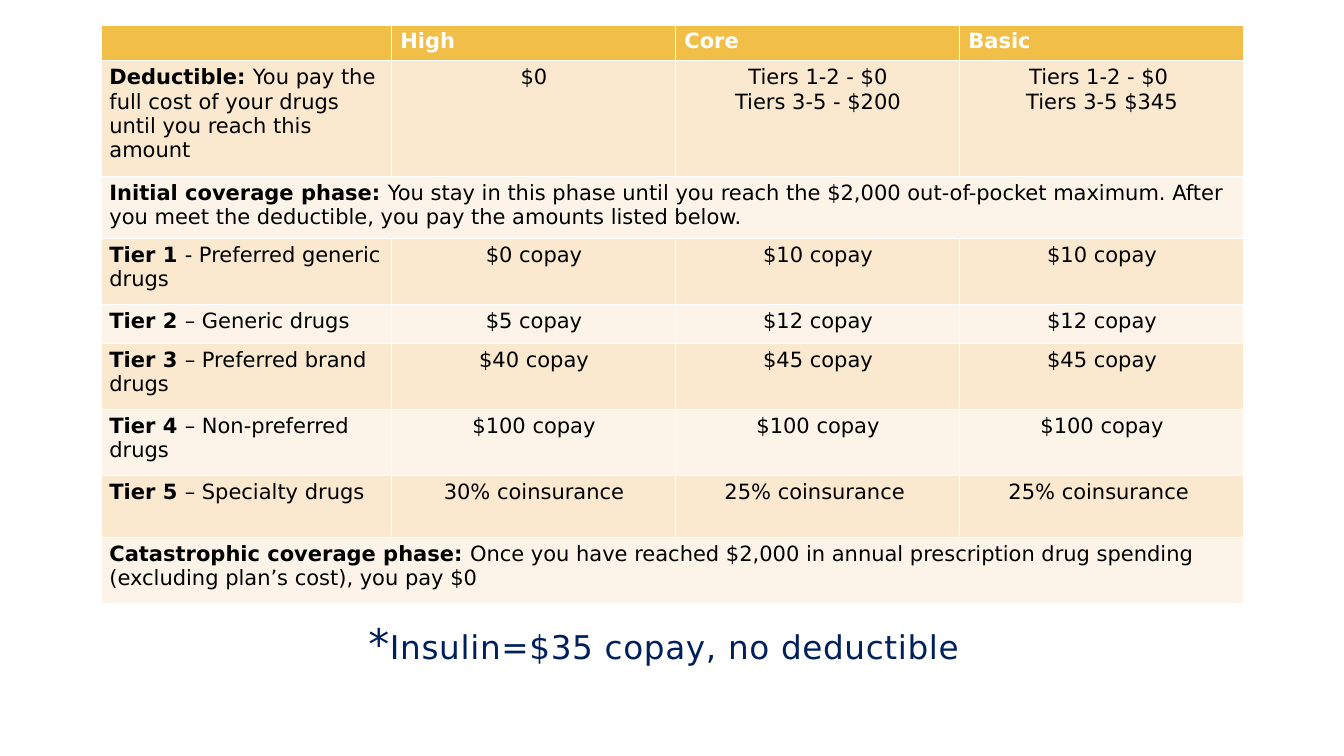
from pptx import Presentation
from pptx.dml.color import RGBColor
from pptx.enum.text import MSO_ANCHOR, PP_ALIGN
from pptx.util import Pt

PX = 914400 // 84
GOLD, SAND, CREAM = "F1BE48", "FAE8CF", "FCF4E9"
WHITE, BLACK, NAVY = "FFFFFF", "000000", "00205B"

# Each row: height, cells. A cell is a list of lines; a label is (bold, plain).
HEAD = ["", "High", "Core", "Basic"]
ROWS = [
    (116, ("Deductible: ", "You pay the full cost of your drugs until you reach this amount"),
     ["$0"], ["Tiers 1-2 - $0", "Tiers 3-5 - $200"], ["Tiers 1-2 - $0 ", "Tiers 3-5 $345"]),
    (62, ("Initial coverage phase: ",
          "You stay in this phase until you reach the $2,000 out-of-pocket maximum. "
          "After you meet the deductible, you pay the amounts listed below.")),
    (66, ("Tier 1 ", "- Preferred generic drugs"),
     ["$0 copay"], ["$10 copay"], ["$10 copay"]),
    (39, ("Tier 2 ", "– Generic drugs"),
     ["$5 copay"], ["$12 copay"], ["$12 copay"]),
    (66, ("Tier 3 ", "– Preferred brand drugs"),
     ["$40 copay"], ["$45 copay"], ["$45 copay"]),
    (66, ("Tier 4 ", "– Non-preferred drugs"),
     ["$100 copay"], ["$100 copay"], ["$100 copay"]),
    (62, ("Tier 5 ", "– Specialty drugs"),
     ["30% coinsurance"], ["25% coinsurance "], ["25% coinsurance "]),
    (66, ("Catastrophic coverage phase: ",
          "Once you have reached $2,000 in annual prescription drug spending "
          "(excluding plan’s cost), you pay $0")),
]


def color(code):
    return RGBColor.from_string(code)


class Deck:
    def __init__(self, wide, high):
        self.font = "DejaVu Sans"
        self.prs = Presentation()
        self.prs.slide_width, self.prs.slide_height = wide * PX, high * PX
        self.slide = self.prs.slides.add_slide(self.prs.slide_layouts[6])

    def style(self, para, tone, size=18, bold=None):
        font = para.font
        font.name, font.size, font.bold = self.font, Pt(size), bold
        font.color.rgb = color(tone)

    def fill(self, cell, tone):
        cell.fill.solid()
        cell.fill.fore_color.rgb = color(tone)

    def label(self, cell, lead, rest):
        """Write a bold lead followed by plain text."""
        para = cell.text_frame.paragraphs[0]
        for text, bold in ((lead, True), (rest, False)):
            run = para.add_run()
            run.text, run.font.bold = text, bold
        self.style(para, BLACK)

    def lines(self, cell, texts):
        cell.text = "\n".join(texts)
        for para in cell.text_frame.paragraphs:
            para.alignment = PP_ALIGN.CENTER
            self.style(para, BLACK, bold=False)

    def table(self, left, top, cols, head, rows):
        """Fill a table; a row with only a label spans all columns."""
        highs = [36] + [row[0] for row in rows]
        frame = self.slide.shapes.add_table(
            len(highs), len(cols), left * PX, top * PX, sum(cols) * PX, sum(highs) * PX)
        grid = frame.table
        grid.horz_banding = False
        for col, wide in zip(grid.columns, cols):
            col.width = wide * PX
        for row, high in zip(grid.rows, highs):
            row.height = high * PX
        for cell, text in zip(grid.rows[0].cells, head):
            cell.text = text
            self.style(cell.text_frame.paragraphs[0], WHITE, bold=True)
            self.fill(cell, GOLD)
        for at, (_, name, *values) in enumerate(rows, 1):
            for cell in grid.rows[at].cells:
                self.fill(cell, SAND if at % 2 else CREAM)
            self.label(grid.cell(at, 0), *name)
            for col, texts in enumerate(values, 1):
                self.lines(grid.cell(at, col), texts)
            if not values:
                grid.cell(at, 0).merge(grid.cell(at, len(cols) - 1))

    def note(self, left, top, wide, high, parts):
        """Add one line of text from (text, size) parts."""
        box = self.slide.shapes.add_textbox(left * PX, top * PX, wide * PX, high * PX)
        frame = box.text_frame
        frame.word_wrap = True
        frame.vertical_anchor = MSO_ANCHOR.MIDDLE
        para = frame.paragraphs[0]
        para.line_spacing, para.space_after = 0.9, Pt(6)
        for text, size in parts:
            run = para.add_run()
            run.text, run.font.size = text, Pt(size)
            run.font._element.set("spc", "60")
        self.style(para, NAVY, 28)


def main():
    deck = Deck(1344, 756)
    deck.note(360, 593, 623, 106, [("*", 36), ("Insulin=$35 copay, no deductible", 28)])
    deck.table(101, 25, [291, 284, 284, 284], HEAD, ROWS)
    deck.prs.save("out.pptx")


if __name__ == "__main__":
    main()
